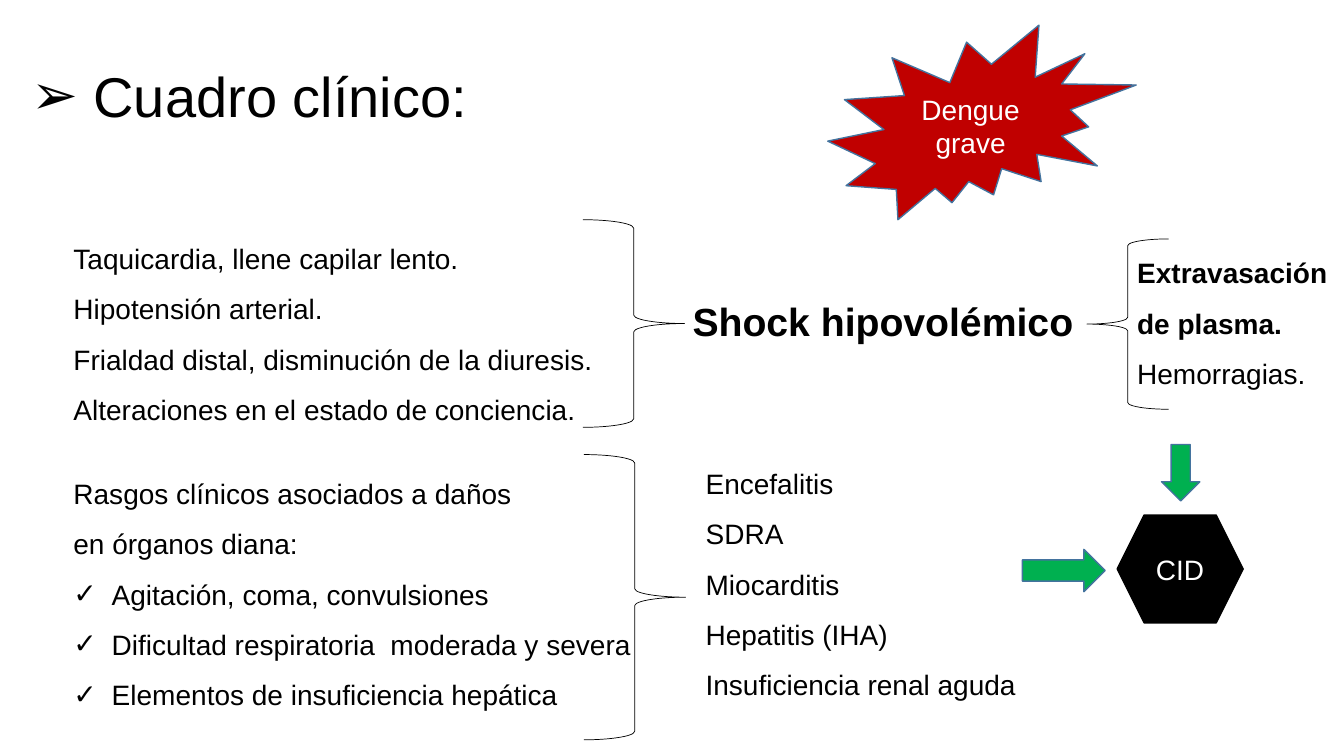
from dataclasses import dataclass

from lxml.etree import SubElement
from pptx import Presentation
from pptx.dml.color import RGBColor as Rgb
from pptx.enum.shapes import MSO_SHAPE as Shape
from pptx.enum.text import MSO_ANCHOR as Anchor, MSO_AUTO_SIZE as AutoSize, PP_ALIGN as Align
from pptx.oxml.ns import qn
from pptx.util import Pt

EMU_PER_PX = 9144  # 100 px to the inch


@dataclass(frozen=True)
class Theme:
    font: str = "Arial"
    ink: Rgb = Rgb(0x00, 0x00, 0x00)
    paper: Rgb = Rgb(0xFF, 0xFF, 0xFF)
    alarm: Rgb = Rgb(0xC0, 0x00, 0x00)
    arrow: Rgb = Rgb(0x00, 0xB0, 0x50)
    outline: Rgb = Rgb(0x43, 0x73, 0x9E)
    title_size: int = 40
    syndrome_size: int = 28
    body_size: int = 20
    list_spacing: float = 1.5
    brace_width: float = 0.5
    outline_width: float = 1


THEME = Theme()


@dataclass(frozen=True)
class Box:
    left: int
    top: int
    width: int
    height: int

    def inner(self, left, top, width, height):
        """Return a box whose position is counted from this one's corner."""
        return Box(self.left + left, self.top + top, width, height)

    def emu(self):
        return [px * EMU_PER_PX for px in (self.left, self.top, self.width, self.height)]


@dataclass(frozen=True)
class Line:
    text: str
    bold: bool = False
    bullet: str = ""
    indent: int = 0


def add_run(paragraph, text, size, color, bold=False):
    run = paragraph.add_run()
    run.text = text
    run.font.name = THEME.font
    run.font.size = Pt(size)
    run.font.bold = bold
    run.font.color.rgb = color


def set_bullet(paragraph, bullet, indent):
    properties = paragraph._p.get_or_add_pPr()
    properties.set("marL", str(indent * EMU_PER_PX))
    properties.set("indent", str(-indent * EMU_PER_PX))
    SubElement(properties, qn("a:buFont")).set("typeface", THEME.font)
    SubElement(properties, qn("a:buChar")).set("char", bullet)


def add_lines(slide, box, lines, size=THEME.body_size, spacing=None):
    frame = slide.shapes.add_textbox(*box.emu()).text_frame
    frame.word_wrap = False
    frame.auto_size = AutoSize.SHAPE_TO_FIT_TEXT
    for index, line in enumerate(lines):
        paragraph = frame.add_paragraph() if index else frame.paragraphs[0]
        if spacing:
            paragraph.line_spacing = spacing
        if line.bullet:
            set_bullet(paragraph, line.bullet, line.indent)
        add_run(paragraph, line.text, size, THEME.ink, line.bold)


def add_list(slide, box, lines):
    add_lines(slide, box, lines, spacing=THEME.list_spacing)


def add_figure(slide, kind, box, fill, outline, label=""):
    figure = slide.shapes.add_shape(kind, *box.emu())
    figure.shadow.inherit = False
    figure.fill.solid()
    figure.fill.fore_color.rgb = fill
    figure.line.color.rgb = outline
    figure.line.width = Pt(THEME.outline_width)
    if label:
        frame = figure.text_frame
        frame.word_wrap = True
        frame.vertical_anchor = Anchor.MIDDLE
        frame.paragraphs[0].alignment = Align.CENTER
        add_run(frame.paragraphs[0], label, THEME.body_size, THEME.paper)


def add_brace(slide, kind, box):
    brace = slide.shapes.add_shape(kind, *box.emu())
    brace.shadow.inherit = False
    brace.fill.background()
    brace.line.color.rgb = THEME.ink
    brace.line.width = Pt(THEME.brace_width)


def draw_heading(slide, box):
    title = Line("Cuadro clínico:", bullet="➢", indent=62)
    add_lines(slide, box.inner(0, 31, 458, 77), [title], THEME.title_size)
    add_figure(slide, Shape.EXPLOSION2, box.inner(800, 0, 306, 193),
               THEME.alarm, THEME.outline, "Dengue grave")


def draw_shock(slide, box):
    """Signs on the left and causes on the right, braced towards the shock."""
    add_list(slide, box.inner(0, 0, 539, 212), [
        Line("Taquicardia, llene capilar lento."),
        Line("Hipotensión arterial."),
        Line("Frialdad distal, disminución de la diuresis."),
        Line("Alteraciones en el estado de conciencia."),
    ])
    add_brace(slide, Shape.RIGHT_BRACE, box.inner(515, 0, 101, 206))
    add_lines(slide, box.inner(614, 72, 402, 57),
              [Line("Shock hipovolémico", bold=True)], THEME.syndrome_size)
    add_brace(slide, Shape.LEFT_BRACE, box.inner(1015, 19, 81, 169))
    add_list(slide, box.inner(1055, 14, 218, 162), [
        Line("Extravasación", bold=True),
        Line("de plasma.", bold=True),
        Line("Hemorragias."),
    ])


def draw_organ_damage(slide, box):
    """Signs of organ damage, braced towards the resulting diagnoses."""
    signs = ["Agitación, coma, convulsiones",
             "Dificultad respiratoria  moderada y severa",
             "Elementos de insuficiencia hepática"]
    diagnoses = ["Encefalitis", "SDRA", "Miocarditis", "Hepatitis (IHA)",
                 "Insuficiencia renal aguda"]
    add_list(slide, box.inner(0, 10, 577, 263), [
        Line("Rasgos clínicos asociados a daños"),
        Line("en órganos diana:"),
        *(Line(sign, bullet="✓", indent=38) for sign in signs),
    ])
    add_brace(slide, Shape.RIGHT_BRACE, box.inner(516, 10, 101, 283))
    add_list(slide, box.inner(627, 0, 330, 263), [Line(name) for name in diagnoses])


def draw_outcome(slide, box):
    """Two arrows leading to the final complication."""
    for kind, place in ((Shape.DOWN_ARROW, box.inner(138, 0, 38, 56)),
                        (Shape.RIGHT_ARROW, box.inner(0, 104, 82, 42))):
        add_figure(slide, kind, place, THEME.arrow, THEME.outline)
    add_figure(slide, Shape.HEXAGON, box.inner(94, 70, 125, 107), THEME.ink, THEME.ink, "CID")


def main():
    deck = Presentation()
    deck.slide_width = 1333 * EMU_PER_PX
    deck.slide_height = 750 * EMU_PER_PX
    slide = deck.slides.add_slide(deck.slide_layouts[6])
    draw_heading(slide, Box(21, 25, 1106, 193))
    draw_shock(slide, Box(63, 218, 1273, 212))
    draw_organ_damage(slide, Box(63, 441, 957, 293))
    draw_outcome(slide, Box(1014, 441, 219, 177))
    deck.save("out.pptx")


if __name__ == "__main__":
    main()
